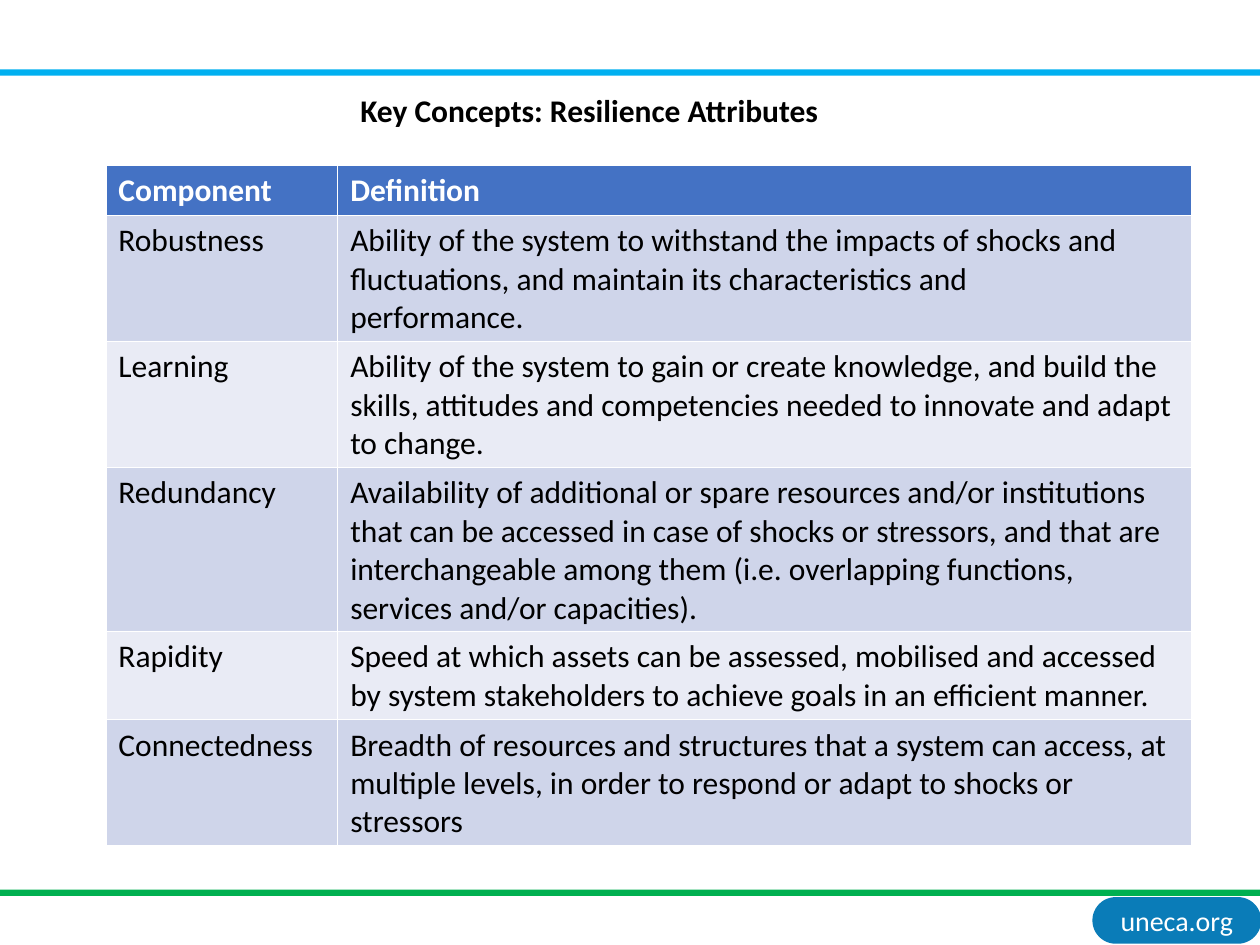
import pptx
import pptx.util
import pptx.dml.color
import pptx.enum.shapes
import pptx.enum.text

kinds = pptx.enum.shapes.MSO_SHAPE
fits = pptx.enum.text.MSO_AUTO_SIZE
sides = pptx.enum.text.PP_ALIGN
tops = pptx.enum.text.MSO_ANCHOR
theme = {
    "font": "Calibri", "text": 18, "link": 16,
    "white": "FFFFFF", "black": "000000", "sky": "00B0F0", "green": "00B050",
    "badge": "0A7CB8", "head": "4472C4", "bands": ["CFD5EA", "E9EBF5"],
}

deck = pptx.Presentation()
wide, high = pptx.util.Inches(10), pptx.util.Inches(7.5)
deck.slide_width, deck.slide_height = wide, high
slide = deck.slides.add_slide(deck.slide_layouts[5])
unit = wide / 10


def put(thing, vals):
    for name, val in vals.items():
        setattr(thing, name, val)


def write(frame, text, size, color, bold=False, align=sides.LEFT):
    frame.text = text
    for para in frame.paragraphs:
        para.alignment = align
        put(para.font, {"name": theme["font"], "size": pptx.util.Pt(size), "bold": bold})
        para.font.color.rgb = pptx.dml.color.RGBColor.from_string(color)


parts = {}
for name, kind, color, left, top, width, height in [
    ("badge", kinds.ROUNDED_RECTANGLE, theme["badge"], 8.67, 7.12, 1.34, 0.37),
    ("upper", kinds.RECTANGLE, theme["sky"], 0, 0.55, 10, 0.05),
    ("lower", kinds.RECTANGLE, theme["green"], 0, 7.06, 10, 0.05),
]:
    part = slide.shapes.add_shape(kind, *[int(n * unit) for n in (left, top, width, height)])
    part.fill.solid()
    part.fill.fore_color.rgb = pptx.dml.color.RGBColor.from_string(color)
    part.line.fill.background()
    part.shadow.inherit = False
    parts[name] = part

badge = parts["badge"]
badge.adjustments[0] = 0.5
inset = int(0.05 * unit)
put(badge.text_frame, {
    "margin_left": inset, "margin_right": inset, "margin_top": inset,
    "margin_bottom": inset, "word_wrap": True, "vertical_anchor": tops.MIDDLE,
})
write(badge.text_frame, "uneca.org", theme["link"], theme["white"], align=sides.CENTER)

title = slide.shapes.title
put(title, {
    "left": int(2.76 * unit), "top": int(0.67 * unit),
    "width": int(3.87 * unit), "height": int(0.4 * unit),
})
put(title.text_frame, {
    "word_wrap": False, "auto_size": fits.SHAPE_TO_FIT_TEXT, "vertical_anchor": tops.TOP,
})
write(title.text_frame, "Key Concepts: Resilience Attributes", theme["text"], theme["black"], True)

rows = [
    (1, "Component", "Definition"),
    (3, "Robustness", "Ability of the system to withstand the impacts of shocks and fluctuations, and maintain its characteristics and\nperformance."),
    (3, "Learning", "Ability of the system to gain or create knowledge, and build the skills, attitudes and competencies needed to innovate and adapt to change."),
    (4, "Redundancy", "Availability of additional or spare resources and/or institutions that can be accessed in case of shocks or stressors, and that are\ninterchangeable among them (i.e. overlapping functions, services and/or capacities)."),
    (2, "Rapidity", "Speed at which assets can be assessed, mobilised and accessed by system stakeholders to achieve goals in an efficient manner."),
    (3, "Connectedness", "Breadth of resources and structures that a system can access, at multiple levels, in order to respond or adapt to shocks or stressors"),
]
cols = [1.84, 6.78]
heights = [int((0.09 + 0.3 * lines) * unit) for lines, *_ in rows]
table = slide.shapes.add_table(
    len(rows), len(cols), int(0.84 * unit), int(1.31 * unit), int(sum(cols) * unit), sum(heights)
).table
for col, width in zip(table.columns, cols):
    col.width = int(width * unit)
for r, (lines, *texts) in enumerate(rows):
    table.rows[r].height = heights[r]
    head = r == 0
    fill = theme["head"] if head else theme["bands"][(r - 1) % 2]
    for c, text in enumerate(texts):
        cell = table.cell(r, c)
        cell.fill.solid()
        cell.fill.fore_color.rgb = pptx.dml.color.RGBColor.from_string(fill)
        write(cell.text_frame, text, theme["text"], theme["white" if head else "black"], head)

deck.save("out.pptx")
